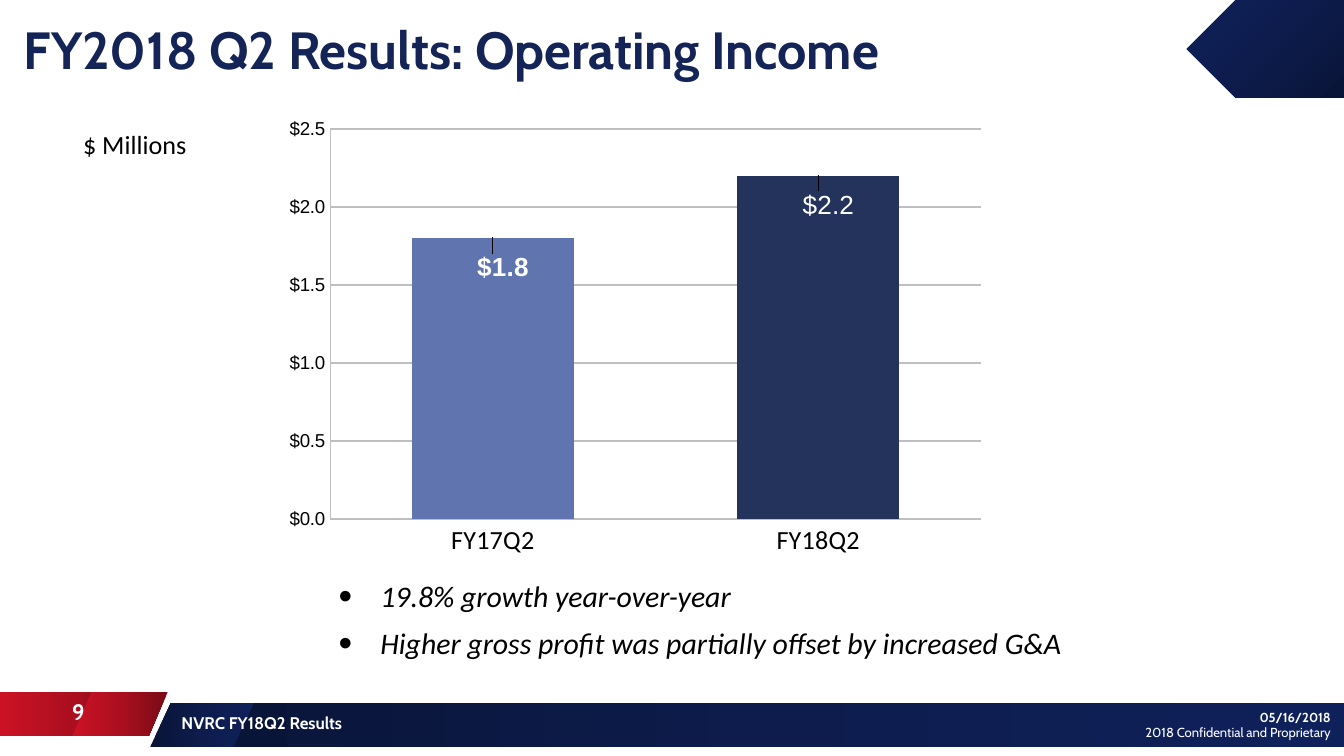
"""Build a quarterly operating income slide with a column chart."""
from copy import deepcopy
from dataclasses import dataclass
from typing import Optional

from lxml import etree
from pptx import Presentation
from pptx.chart.data import CategoryChartData
from pptx.dml.color import RGBColor
from pptx.enum.chart import XL_CHART_TYPE, XL_LABEL_POSITION, XL_TICK_MARK
from pptx.enum.shapes import MSO_SHAPE
from pptx.enum.text import MSO_ANCHOR, PP_ALIGN
from pptx.oxml.ns import qn
from pptx.util import Cm, Pt

PENTAGON = MSO_SHAPE.PENTAGON
RECTANGLE = MSO_SHAPE.RECTANGLE
SLANT = MSO_SHAPE.FLOWCHART_DATA
LEFT, CENTER, RIGHT = PP_ALIGN.LEFT, PP_ALIGN.CENTER, PP_ALIGN.RIGHT
TOP, MIDDLE = MSO_ANCHOR.TOP, MSO_ANCHOR.MIDDLE
CLUSTERED = XL_CHART_TYPE.COLUMN_CLUSTERED
INSIDE_END = XL_LABEL_POSITION.INSIDE_END
NO_TICK = XL_TICK_MARK.NONE

BLACK = RGBColor(0, 0, 0)
WHITE = RGBColor(255, 255, 255)
TITLE_NAVY = RGBColor(0x14, 0x24, 0x56)
GRID_GRAY = RGBColor(0xBF, 0xBF, 0xBF)
LABEL_GRAY = RGBColor(0x40, 0x40, 0x40)
SERIES_BLUE = RGBColor(0x4C, 0x56, 0x80)
BAR_LIGHT = RGBColor(0x60, 0x75, 0xB0)
BAR_DARK = RGBColor(0x24, 0x33, 0x5C)
NAVIES = (RGBColor(0x09, 0x14, 0x36), RGBColor(0x0D, 0x1C, 0x4D), RGBColor(0x0F, 0x21, 0x5B))
REDS = (RGBColor(0x78, 0x0B, 0x16), RGBColor(0xAB, 0x0F, 0x1F), RGBColor(0xCB, 0x12, 0x24))
DOLLARS = '"$"#,##0.0'


@dataclass
class Band:
    """A gradient shape, placed in centimetres."""
    preset: int
    place: tuple
    colors: tuple
    angle: float
    rotation: float = 0


@dataclass
class Label:
    """A text box, placed in centimetres."""
    lines: tuple
    place: tuple
    size: float
    font: str
    color: RGBColor = BLACK
    bold: tuple = (False, False)
    italic: bool = False
    align: int = LEFT
    anchor: int = TOP
    bullet: Optional[str] = None


BANDS = (
    Band(PENTAGON, (22.43, 0, 2.97, 1.85), NAVIES, 315, 180),
    Band(RECTANGLE, (0, 13.08, 2.74, 0.84), REDS, 180),
    Band(SLANT, (1.37, 13.08, 1.8, 0.84), REDS, 180),
    Band(RECTANGLE, (3.43, 13.28, 21.97, 0.84), NAVIES, 0),
    Band(SLANT, (2.84, 13.28, 1.96, 0.84), NAVIES, 0),
)
LABELS = (
    Label(("FY2018 Q2 Results: Operating Income",), (0.2, 0, 22.02, 1.85), 28, "Cabin",
          TITLE_NAVY, (True,), anchor=MIDDLE),
    Label(("$ Millions",), (1.32, 2.31, 8.05, 1.02), 14, "Calibri"),
    Label(("19.8% growth year-over-year",
           "Higher gross profit was partially offset by increased G&A"),
          (6.15, 10.8, 17.65, 1.83), 16, "Calibri", italic=True, bullet="•"),
    Label(("9",), (0, 13.08, 2.97, 0.76), 12, "Cabin", WHITE, (True,), align=CENTER),
    Label(("NVRC FY18Q2 Results",), (3.18, 13.28, 17.58, 0.76), 9, "Cabin", WHITE, (True,),
          anchor=MIDDLE),
    Label(("05/16/2018", "2018 Confidential and Proprietary"), (20.75, 13.28, 4.65, 0.76),
          7, "Cabin", WHITE, (True, False), align=RIGHT),
)


def style_font(font, size: float, name: str, color: RGBColor, bold: bool = False) -> None:
    """Set the size, face, colour and weight of a font."""
    font.size, font.name, font.bold = Pt(size), name, bold
    font.color.rgb = color


def draw_band(page, band: Band) -> None:
    """Draw a shape with an evenly spaced three-stop gradient."""
    shape = page.shapes.add_shape(band.preset, *map(Cm, band.place))
    shape.shadow.inherit = False
    shape.rotation = band.rotation
    shape.line.fill.background()
    shape.fill.gradient()
    shape.fill.gradient_angle = band.angle
    stop_list = next(shape._element.iter(qn("a:gsLst")))
    stop_list.insert(1, deepcopy(stop_list[0]))
    for index, (stop, color) in enumerate(zip(shape.fill.gradient_stops, band.colors)):
        stop.position = index / 2
        stop.color.rgb = color


def add_bullet(para, character: str) -> None:
    """Give a paragraph a hanging bullet."""
    properties = para._p.get_or_add_pPr()
    properties.set("marL", str(Cm(0.79)))
    properties.set("indent", str(-Cm(0.79)))
    etree.SubElement(properties, qn("a:buSzPct"), val="130000")
    etree.SubElement(properties, qn("a:buFont"), typeface="Arial")
    etree.SubElement(properties, qn("a:buChar"), char=character)
    para.space_after = Pt(6)


def draw_label(page, label: Label) -> None:
    """Draw a text box and format its paragraphs."""
    frame = page.shapes.add_textbox(*map(Cm, label.place)).text_frame
    frame.word_wrap = True
    frame.vertical_anchor = label.anchor
    frame.text = "\n".join(label.lines)
    for para, bold in zip(frame.paragraphs, label.bold):
        para.alignment = label.align
        if label.bullet:
            add_bullet(para, label.bullet)
        for span in para.runs:
            style_font(span.font, label.size, label.font, label.color, bold)
            span.font.italic = label.italic


def manual_layout(**values) -> etree._Element:
    """Return a chart layout element holding the given settings."""
    layout = etree.Element(qn("c:layout"))
    manual = etree.SubElement(layout, qn("c:manualLayout"))
    for name, value in values.items():
        etree.SubElement(manual, qn(f"c:{name}"), val=str(value))
    return layout


def draw_income_chart(page) -> None:
    """Draw the operating income columns."""
    data = CategoryChartData(number_format=DOLLARS)
    data.categories = ("FY17Q2", "FY18Q2")
    data.add_series("Series 1", (1.8, 2.2))
    place = map(Cm, (5.36, 1.85, 13.59, 9.3))
    chart = page.shapes.add_chart(CLUSTERED, *place, data).chart
    chart.has_legend = chart.has_title = False
    style_font(chart.font, 10, "Calibri", BLACK)

    periods, dollars = chart.category_axis, chart.value_axis
    for axis, size, font in ((periods, 14, "Calibri"), (dollars, 10, "Arial")):
        axis.major_tick_mark = axis.minor_tick_mark = NO_TICK
        style_font(axis.tick_labels.font, size, font, BLACK)
    periods.format.line.fill.background()
    dollars.minimum_scale, dollars.maximum_scale, dollars.major_unit = 0, 2.5, 0.5
    dollars.tick_labels.number_format = DOLLARS
    dollars.tick_labels.number_format_is_linked = False
    for line, width in ((dollars.format.line, 0.75), (dollars.major_gridlines.format.line, 1.25)):
        line.color.rgb = GRID_GRAY
        line.width = Pt(width)

    plot = chart.plots[0]
    plot.gap_width = 101
    plot.vary_by_categories = False
    series = plot.series[0]
    series.format.fill.solid()
    series.format.fill.fore_color.rgb = SERIES_BLUE
    labels = series.data_labels
    labels.show_value = True
    labels.number_format, labels.number_format_is_linked = DOLLARS, False
    labels.position = INSIDE_END
    style_font(labels.font, 14, "Arial", LABEL_GRAY, True)
    for index, (color, bold) in enumerate(((BAR_LIGHT, True), (BAR_DARK, False))):
        point = series.points[index]
        point.format.fill.solid()
        point.format.fill.fore_color.rgb = color
        style_font(point.data_label.font, 14, "Arial", WHITE, bold)
        point.data_label.position = INSIDE_END

    for element in chart._chartSpace.iter(qn("c:dLbl")):
        element.insert(1, manual_layout(x=0.014, y=0.02))
    area = next(chart._chartSpace.iter(qn("c:plotArea")))
    for layout in area.findall(qn("c:layout")):
        area.remove(layout)
    area.insert(0, manual_layout(layoutTarget="inner", xMode="edge", yMode="edge",
                                 x=0.065, y=0.063, w=0.905, h=0.793))


def main() -> None:
    """Build and save the slide."""
    deck = Presentation()
    deck.slide_width, deck.slide_height = Cm(25.4), Cm(14.29)
    page = deck.slides.add_slide(deck.slide_layouts[6])
    for band in BANDS:
        draw_band(page, band)
    draw_income_chart(page)
    for label in LABELS:
        draw_label(page, label)
    deck.save("out.pptx")


if __name__ == "__main__":
    main()
